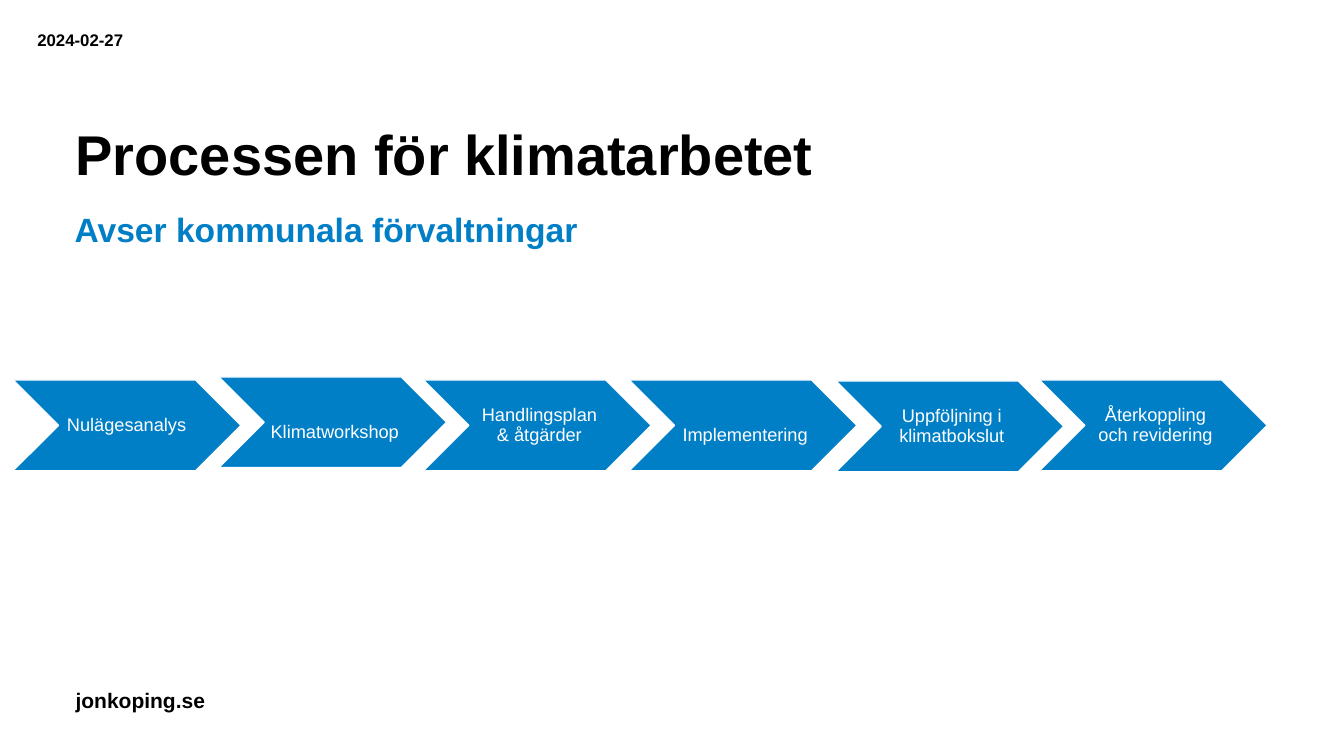
from dataclasses import dataclass

from pptx import Presentation
from pptx.dml.color import RGBColor
from pptx.enum.shapes import MSO_SHAPE
from pptx.enum.text import MSO_ANCHOR, MSO_AUTO_SIZE, PP_ALIGN
from pptx.util import Inches, Pt

CHEVRON = MSO_SHAPE.CHEVRON
TOP, MIDDLE, BOTTOM = MSO_ANCHOR.TOP, MSO_ANCHOR.MIDDLE, MSO_ANCHOR.BOTTOM
LEFT, CENTER = PP_ALIGN.LEFT, PP_ALIGN.CENTER
NO_AUTOFIT = MSO_AUTO_SIZE.NONE

FONT = "Arial"
BLUE, BLACK, WHITE = "007FC7", "000000", "FFFFFF"
STEP_W, STEP_H = 2.26, 0.9
LABEL_DX, LABEL_W = 0.45, 1.36


@dataclass
class Step:
    label: str
    left: float
    top: float = 3.77
    drop: float = 0.0  # distance of the label below the middle


STEPS = [
    Step("Nulägesanalys ", 0.13),
    Step("Klimatworkshop", 2.17, top=3.74, drop=0.1),
    Step("Handlingsplan & åtgärder", 4.2),
    Step("Implementering", 6.24, drop=0.1),
    Step("Uppföljning i klimatbokslut", 8.29, top=3.78),
    Step("Återkoppling och revidering", 10.31),
]


def rgb(value: str) -> RGBColor:
    return RGBColor.from_string(value)


def write(sp, text: str, size: float, color: str, bold: bool = True,
          anchor=TOP, align=LEFT, insets=(0, 0, 0, 0),
          wrap: bool = True, spacing: float = 1.0) -> None:
    tf = sp.text_frame
    tf.auto_size = NO_AUTOFIT
    tf.word_wrap = wrap
    tf.vertical_anchor = anchor
    tf.margin_left, tf.margin_top, tf.margin_right, tf.margin_bottom = map(Inches, insets)
    p = tf.paragraphs[0]
    p.alignment = align
    p.line_spacing = spacing
    r = p.add_run()
    r.text = text
    r.font.name = FONT
    r.font.size = Pt(size)
    r.font.bold = bold
    r.font.color.rgb = rgb(color)


def add_text(shapes, left: float, top: float, width: float, height: float,
             text: str, size: float, color: str, **style) -> None:
    sp = shapes.add_textbox(Inches(left), Inches(top), Inches(width), Inches(height))
    write(sp, text, size, color, **style)


def add_step(shapes, step: Step) -> None:
    sp = shapes.add_shape(CHEVRON, Inches(step.left), Inches(step.top),
                          Inches(STEP_W), Inches(STEP_H))
    sp.shadow.inherit = False
    sp.fill.solid()
    sp.fill.fore_color.rgb = rgb(BLUE)
    sp.line.color.rgb = rgb(WHITE)
    sp.line.width = Pt(1)
    add_text(shapes, step.left + LABEL_DX, step.top + step.drop, LABEL_W, STEP_H,
             step.label, 13, WHITE, bold=False, anchor=MIDDLE, align=CENTER,
             insets=(0.06, 0.02, 0.02, 0.02), spacing=0.9)


def main() -> None:
    prs = Presentation()
    prs.slide_width, prs.slide_height = Inches(13.33), Inches(7.5)
    slide = prs.slides.add_slide(prs.slide_layouts[5])

    # Title and subtitle
    title = slide.shapes.title
    title.left, title.top = Inches(0.75), Inches(0.64)
    title.width, title.height = Inches(11.84), Inches(1.22)
    write(title, "Processen för klimatarbetet", 40, BLACK, anchor=BOTTOM, spacing=0.9)
    add_text(slide.shapes, 0.74, 2.15, 11.84, 0.32, "Avser kommunala förvaltningar",
             24, BLUE, anchor=BOTTOM)

    # Date and web address
    add_text(slide.shapes, 0.37, 0.3, 0.98, 0.2, "2024-02-27", 12, BLACK)
    add_text(slide.shapes, 0.75, 6.82, 1.29, 0.25, "jonkoping.se", 15, BLACK, wrap=False)

    # Process chain
    chain = slide.shapes.add_group_shape()
    for step in STEPS:
        add_step(chain.shapes, step)

    prs.save("out.pptx")


if __name__ == "__main__":
    main()
